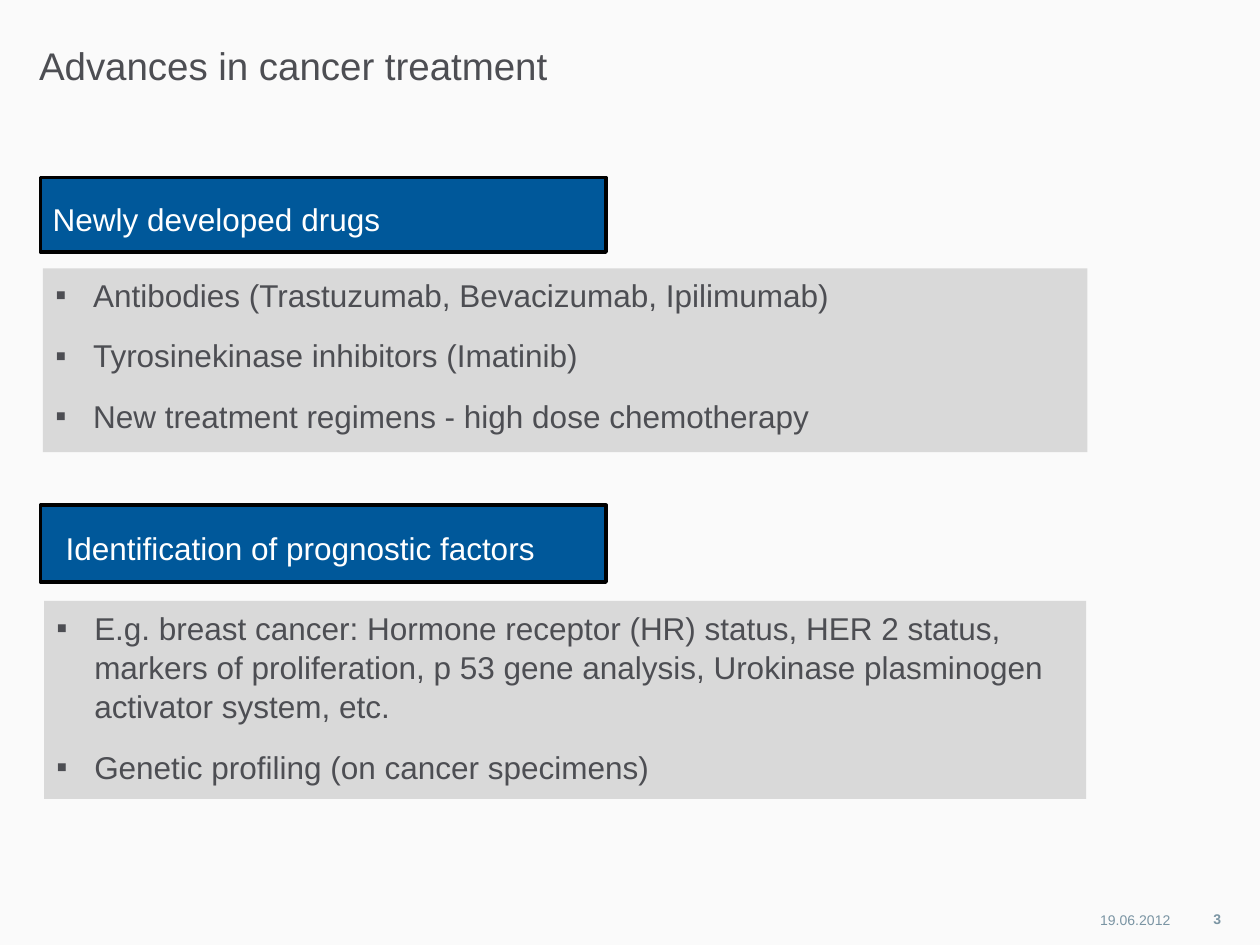
from lxml import etree
from pptx import Presentation, util as u
from pptx.dml.color import RGBColor
from pptx.enum import shapes, text
from pptx.oxml.ns import qn

INCH = 2.54
GREY_TEXT, FOOTER_TEXT, WHITE = "4D4E53", "7A94A3", "FFFFFF"
PANEL, BANNER, BLACK, PAPER = "D9D9D9", "00589A", "000000", "FAFAFA"
DEFAULT_INSETS = (0.1, 0.05, 0.1, 0.05)


def inches(value):
    """Length in Cm for a measure on the slide's inch grid."""
    return u.Cm(value * INCH)


def rgb(color):
    return RGBColor.from_string(color)


def paint(fill, color):
    fill.solid()
    fill.fore_color.rgb = rgb(color)


class SlideBuilder:
    """Holds the text style and the slide being built."""

    font = "Arial"
    hanging = 0.3
    paragraph_gap = 12

    def __init__(self, slide):
        self.slide = slide
        paint(slide.background.fill, PAPER)

    def set_text(self, shape, lines, size=18, color=GREY_TEXT, bold=False,
                 insets=DEFAULT_INSETS, anchor=text.MSO_ANCHOR.TOP,
                 align=text.PP_ALIGN.LEFT, spacing=None, bulleted=False):
        frame = shape.text_frame
        sides = ("margin_left", "margin_top", "margin_right", "margin_bottom")
        frame_format = dict(zip(sides, map(inches, insets)))
        frame_format.update(word_wrap=True, vertical_anchor=anchor)
        for key, value in frame_format.items():
            setattr(frame, key, value)

        for index, line in enumerate(lines):
            paragraph = frame.paragraphs[0] if index == 0 else frame.add_paragraph()
            paragraph.text = line
            paragraph.alignment = align
            if spacing:
                paragraph.line_spacing = spacing
            if index:
                paragraph.space_before = u.Pt(self.paragraph_gap)
            if bulleted:
                self.add_bullet(paragraph)
            font_format = {"name": self.font, "size": u.Pt(size), "bold": bold}
            for key, value in font_format.items():
                setattr(paragraph.font, key, value)
            paragraph.font.color.rgb = rgb(color)

    def add_bullet(self, paragraph):
        properties = paragraph._p.get_or_add_pPr()
        properties.set("marL", str(inches(self.hanging)))
        properties.set("indent", str(-inches(self.hanging)))
        etree.SubElement(properties, qn("a:buFont"), typeface=self.font)
        etree.SubElement(properties, qn("a:buChar"), char="▪")

    def label(self, place, wording, **style):
        box = self.slide.shapes.add_textbox(*map(inches, place))
        self.set_text(box, [wording], **style)

    def rectangle(self, place, fill):
        box = self.slide.shapes.add_shape(
            shapes.MSO_SHAPE.RECTANGLE, *map(inches, place))
        box.shadow.inherit = False
        paint(box.fill, fill)
        box.line.fill.background()
        return box

    def panel(self, place, points):
        self.set_text(self.rectangle(place, PANEL), points,
                      spacing=1.04, bulleted=True)

    def banner(self, place, heading, insets=DEFAULT_INSETS):
        box = self.rectangle(place, BANNER)
        paint(box.line.fill, BLACK)
        box.line.width = u.Pt(2)
        self.set_text(box, [heading], color=WHITE, insets=insets,
                      anchor=text.MSO_ANCHOR.MIDDLE, spacing=1.2)


def main():
    deck = Presentation()
    deck.slide_width, deck.slide_height = inches(10), inches(7.5)
    page = SlideBuilder(deck.slides.add_slide(deck.slide_layouts[6]))

    flush = (0, 0, 0, 0)
    page.label((0.31, 0.33, 7.48, 0.79), "Advances in cancer treatment",
               size=22, insets=flush)

    footer = dict(size=8, color=FOOTER_TEXT, align=text.PP_ALIGN.RIGHT,
                  anchor=text.MSO_ANCHOR.MIDDLE)
    page.label((8.38, 7.15, 0.91, 0.3), "19.06.2012", insets=flush, **footer)
    page.label((9.31, 7.14, 0.48, 0.3), "3", bold=True, **footer)

    page.panel((0.34, 2.13, 8.29, 1.46), [
        "Antibodies (Trastuzumab, Bevacizumab, Ipilimumab)",
        "Tyrosinekinase inhibitors (Imatinib)",
        "New treatment regimens - high dose chemotherapy",
    ])
    page.panel((0.35, 4.77, 8.27, 1.57), [
        "E.g. breast cancer: Hormone receptor (HR) status, HER 2 status, "
        "markers of proliferation, p 53 gene analysis, Urokinase plasminogen "
        "activator system, etc.",
        "Genetic profiling (on cancer specimens)",
    ])
    page.banner((0.32, 1.41, 4.49, 0.59), "Newly developed drugs")
    page.banner((0.32, 4.01, 4.49, 0.61), "Identification of prognostic factors",
                insets=(0.2, 0.04, 0.08, 0.04))

    deck.save("out.pptx")


if __name__ == "__main__":
    main()
